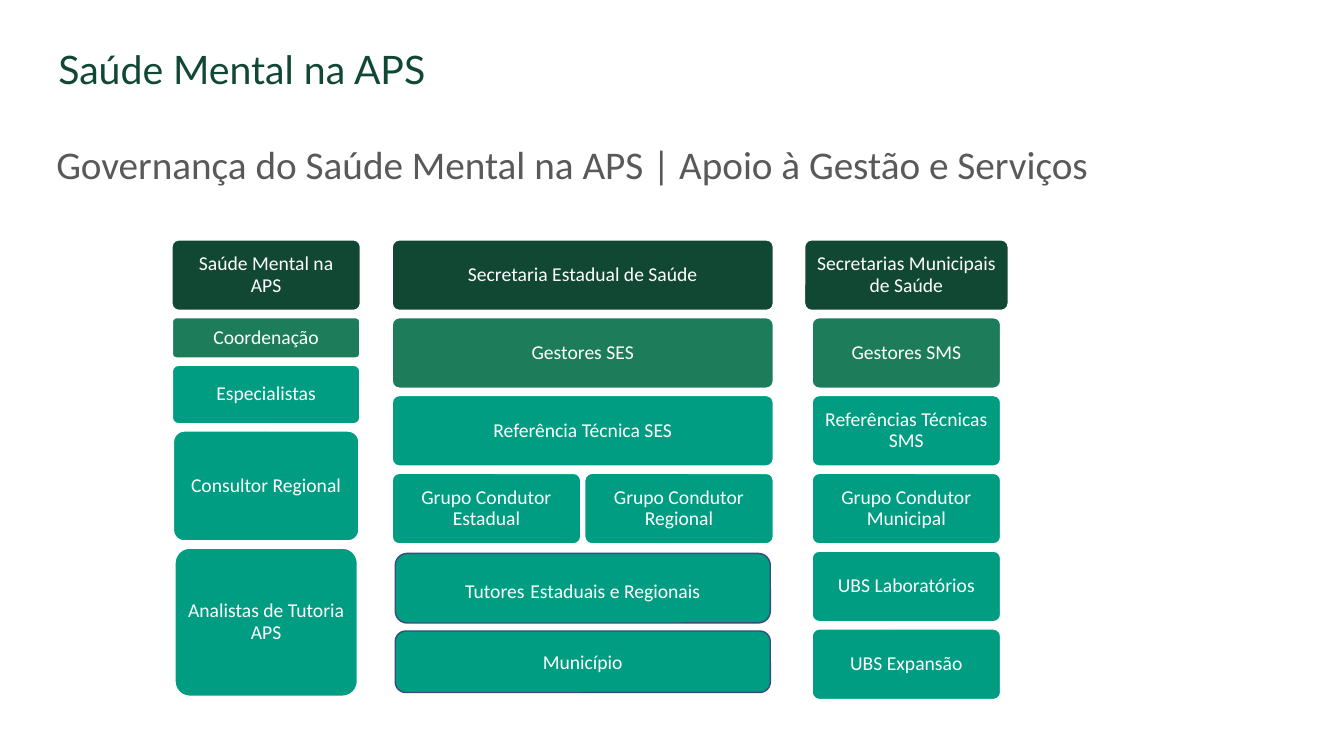
import pptx
import pptx.dml.color
import pptx.enum.shapes
import pptx.enum.text
import pptx.util

Inches = pptx.util.Inches
Pt = pptx.util.Pt

COLORS = {
    "dark": "114834",
    "medium": "1D7D5B",
    "teal": "009D82",
    "gray": "595959",
    "navy": "374B7F",
    "white": "FFFFFF",
}

TOP = 2.38
ROW_HEIGHT = 0.7
PITCH = 3.86 / 5
GAP = PITCH - ROW_HEIGHT
UNIT_WIDTH = 1.87
STATE_WIDTH = 3.78
STATE_CENTER = 5.78
TUTOR_WIDTH = 3.72


def color(name):
    return pptx.dml.color.RGBColor.from_string(COLORS[name])


class Board:
    """Holds the text style and the slide being drawn."""

    def __init__(self, page, font="Calibri", size=14):
        self.page = page
        self.font = font
        self.size = size

    def add_span(self, para, text, size, tint, font=None):
        span = para.add_run()
        span.text = text
        span.font.name = font or self.font
        span.font.size = Pt(size)
        span.font.color.rgb = color(tint)

    def heading(self, text, left, top, width, height, tint, font=None):
        box = self.page.shapes.add_textbox(
            Inches(left), Inches(top), Inches(width), Inches(height))
        frame = box.text_frame
        frame.word_wrap = True
        frame.vertical_anchor = pptx.enum.text.MSO_ANCHOR.MIDDLE
        para = frame.paragraphs[0]
        para.line_spacing = 0.9
        self.add_span(para, text, 28, tint, font)

    def card(self, spans, center, top, width, height, fill,
             line="white", corner=0.1, spacing=0.9):
        """Draw a rounded card; spans is a list of (text, size) pairs."""
        shape = self.page.shapes.add_shape(
            pptx.enum.shapes.MSO_SHAPE.ROUNDED_RECTANGLE,
            Inches(center - width / 2), Inches(top),
            Inches(width), Inches(height))
        shape.adjustments[0] = corner
        shape.shadow.inherit = False
        shape.fill.solid()
        shape.fill.fore_color.rgb = color(fill)
        shape.line.color.rgb = color(line)
        shape.line.width = Pt(1)
        frame = shape.text_frame
        frame.word_wrap = True
        frame.vertical_anchor = pptx.enum.text.MSO_ANCHOR.MIDDLE
        frame.margin_left = frame.margin_right = Inches(0.08)
        frame.margin_top = frame.margin_bottom = Inches(0.08)
        para = frame.paragraphs[0]
        para.alignment = pptx.enum.text.PP_ALIGN.CENTER
        para.line_spacing = spacing
        for text, size in spans:
            self.add_span(para, text, size, "white")

    def stack(self, center, cards):
        """Pile (text, width, height, fill) cards downwards at equal gaps."""
        top = TOP
        for text, width, height, fill in cards:
            self.card([(text, self.size)], center, top, width, height, fill)
            top += height + GAP


def main():
    deck = pptx.Presentation()
    deck.slide_width = Inches(13.33)
    deck.slide_height = Inches(7.5)
    board = Board(deck.slides.add_slide(deck.slide_layouts[6]))

    board.heading("Saúde Mental na APS", 0.48, 0.43, 7.08, 0.57, "dark", "Lato")
    board.heading("Governança do Saúde Mental na APS | Apoio à Gestão e Serviços",
                  0.46, 0.93, 10.99, 1.45, "gray")

    board.stack(2.64, [
        ("Saúde Mental na APS", UNIT_WIDTH, ROW_HEIGHT, "dark"),
        ("Coordenação", 1.86, 0.4, "medium"),
        ("Especialistas", 1.86, 0.58, "teal"),
        ("Consultor Regional", 1.84, 1.09, "teal"),
        ("Analistas de Tutoria APS", 1.81, 1.47, "teal"),
    ])
    board.stack(STATE_CENTER, [
        ("Secretaria Estadual de Saúde", STATE_WIDTH, ROW_HEIGHT, "dark"),
        ("Gestores SES", STATE_WIDTH, ROW_HEIGHT, "medium"),
        ("Referência Técnica SES", STATE_WIDTH, ROW_HEIGHT, "teal"),
    ])
    board.stack(8.99, [
        ("Secretarias Municipais de Saúde", 2.02, ROW_HEIGHT, "dark"),
        ("Gestores SMS", UNIT_WIDTH, ROW_HEIGHT, "medium"),
        ("Referências Técnicas SMS", UNIT_WIDTH, ROW_HEIGHT, "teal"),
        ("Grupo Condutor Municipal", UNIT_WIDTH, ROW_HEIGHT, "teal"),
        ("UBS Laboratórios", UNIT_WIDTH, ROW_HEIGHT, "teal"),
        ("UBS Expansão", UNIT_WIDTH, ROW_HEIGHT, "teal"),
    ])

    half_offset = (STATE_WIDTH - UNIT_WIDTH) / 2
    for side, group in ((-1, "Grupo Condutor Estadual"),
                        (1, "Grupo Condutor Regional")):
        board.card([(group, board.size)], STATE_CENTER + side * half_offset,
                   TOP + 3 * PITCH, UNIT_WIDTH, ROW_HEIGHT, "teal")

    tutors = [("Tutores", 14), (" ", 18), ("Estaduais e Regionais", 14)]
    for spans, top, height in ((tutors, 5.49, 0.69),
                               ([("Município", 14)], 6.26, 0.61)):
        board.card(spans, STATE_CENTER, top, TUTOR_WIDTH, height, "teal",
                   line="navy", corner=0.17, spacing=1.0)

    deck.save("out.pptx")


if __name__ == "__main__":
    main()
